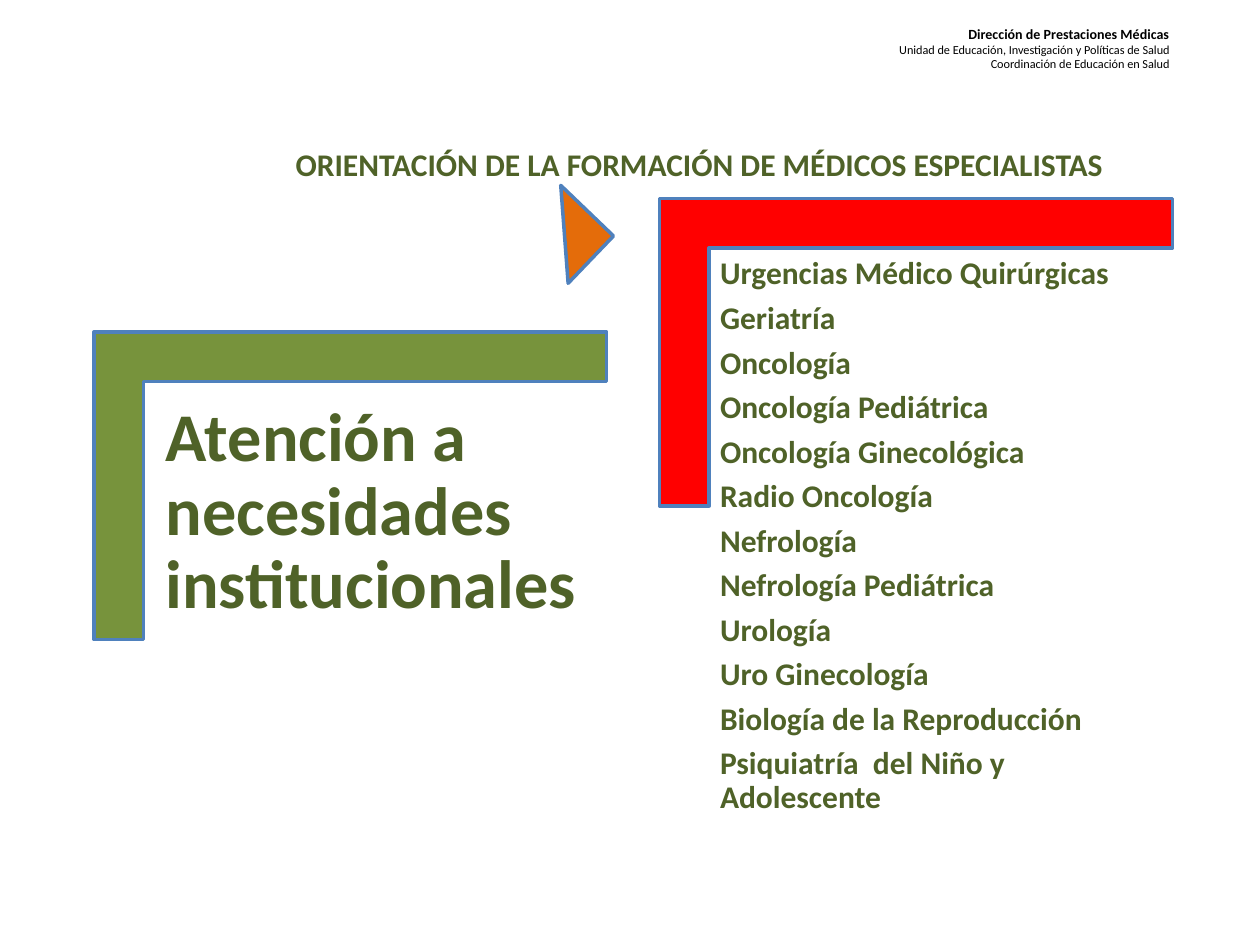
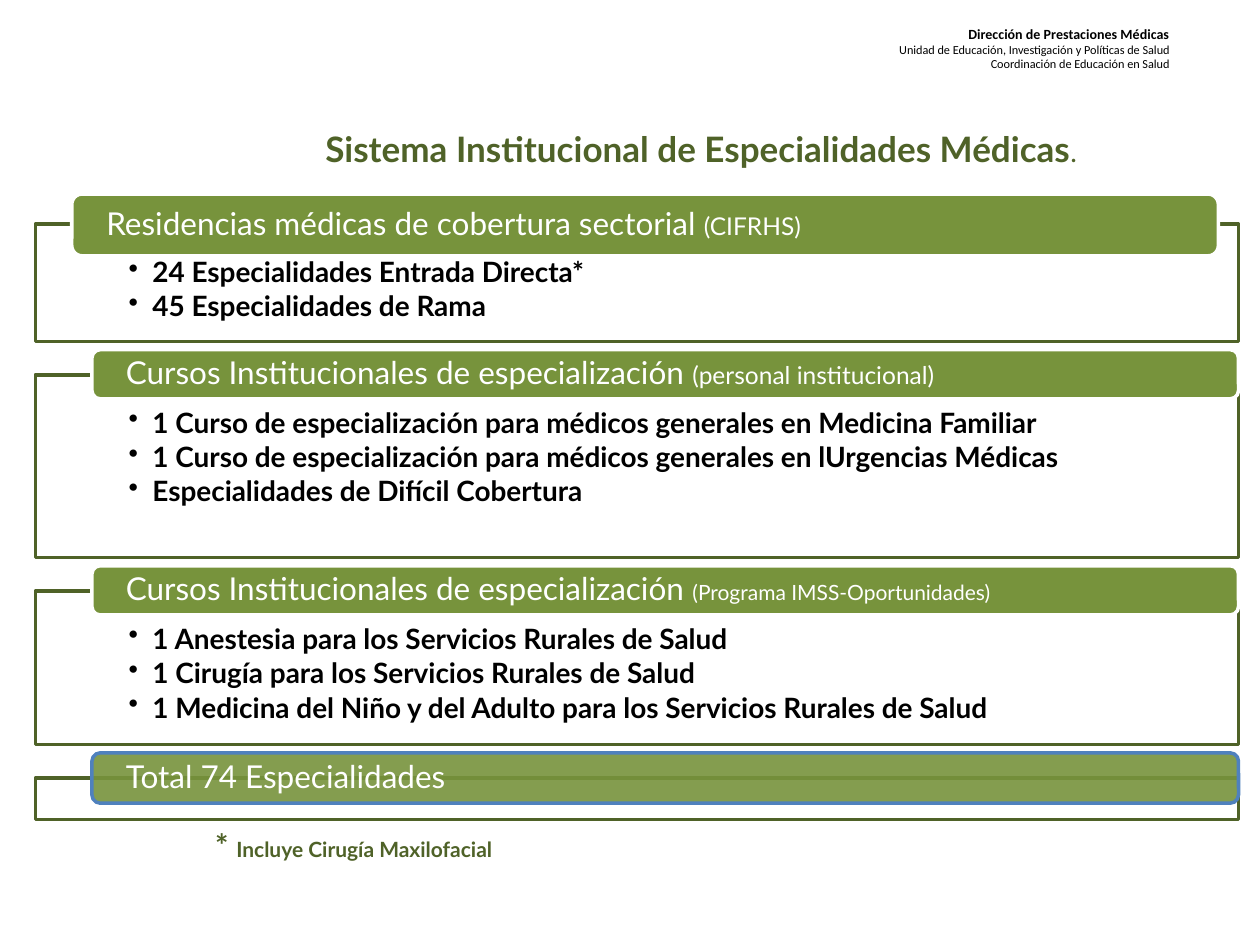
from collections import namedtuple
from dataclasses import dataclass

from lxml import etree
from pptx import Presentation
from pptx.dml.color import RGBColor
from pptx.enum.shapes import MSO_SHAPE
from pptx.enum.text import MSO_ANCHOR, PP_ALIGN
from pptx.oxml.ns import qn
from pptx.util import Inches, Pt

RECT, ROUND = MSO_SHAPE.RECTANGLE, MSO_SHAPE.ROUNDED_RECTANGLE
CORNER, WEDGE = MSO_SHAPE.CORNER, MSO_SHAPE.ISOSCELES_TRIANGLE
LEFT, MID, RIGHT = PP_ALIGN.LEFT, PP_ALIGN.CENTER, PP_ALIGN.RIGHT
TOP, HALF = MSO_ANCHOR.TOP, MSO_ANCHOR.MIDDLE

# The grid has 100 columns and 75 rows
WIDE, HIGH = Inches(10), Inches(7.5)
COL, ROW = WIDE / 100, HIGH / 75
Box = namedtuple("Box", "x y w h")


@dataclass(frozen=True)
class Theme:
    dark: str = "4F6228"
    green: str = "77933C"
    blue: str = "4F81BD"
    red: str = "FF0000"
    gold: str = "E46C0A"
    white: str = "FFFFFF"
    black: str = "000000"
    main: str = "Calibri"
    alt: str = "Lato"
    huge: int = 39
    title: int = 20
    head: int = 18
    body: int = 16
    side: int = 14
    note: int = 12
    unit: int = 8
    tiny: int = 7
    edge: int = 2


T = Theme()


def place(box):
    """Turn grid columns and rows into slide lengths."""
    return [round(n) for n in (box.x * COL, box.y * ROW, box.w * COL, box.h * ROW)]


def within(box, x, y, w, h):
    """A box set off from the top left of another."""
    return Box(box.x + x, box.y + y, w, h)


def draw(slide, kind, box, fill, line, alpha=None, turn=0, adjust=()):
    shape = slide.shapes.add_shape(kind, *place(box))
    shape.shadow.inherit = False
    shape.rotation = turn
    for i, part in enumerate(adjust):
        shape.adjustments[i] = part
    shape.fill.solid()
    shape.fill.fore_color.rgb = RGBColor.from_string(fill)
    if alpha:
        tone = shape._element.spPr.find(qn("a:solidFill")).find(qn("a:srgbClr"))
        etree.SubElement(tone, qn("a:alpha")).set("val", str(alpha * 1000))
    shape.line.color.rgb = RGBColor.from_string(line)
    shape.line.width = Pt(T.edge)
    return shape


def write(shape, paras, size=T.head, font=T.main, color=T.dark, bold=False,
          align=LEFT, anchor=TOP, inset=(1, 0.5, 1, 0.5), lead=None,
          after=0, bullet=False):
    """Each paragraph is a string or a list of (text, own format) runs."""
    frame = shape.text_frame
    frame.word_wrap = True
    frame.vertical_anchor = anchor
    (frame.margin_left, frame.margin_top,
     frame.margin_right, frame.margin_bottom) = [round(n * COL) for n in inset]
    for i, para in enumerate(paras):
        p = frame.paragraphs[0] if i == 0 else frame.add_paragraph()
        p.alignment = align
        p.line_spacing = lead
        p.space_after = Pt(after)
        if bullet:
            props = p._p.get_or_add_pPr()
            props.set("marL", str(Inches(0.19)))
            props.set("indent", str(-Inches(0.19)))
            etree.SubElement(props, qn("a:buChar")).set("char", "•")
        for words, own in ([(para, {})] if isinstance(para, str) else para):
            run = p.add_run()
            run.text = words
            run.font.name = font
            run.font.size = Pt(own.get("size", size))
            run.font.bold = own.get("bold", bold)
            run.font.color.rgb = RGBColor.from_string(color)


def label(slide, box, paras, **form):
    write(slide.shapes.add_textbox(*place(box)), paras, **form)


# Shared page with the unit's name at the top right
def page(deck):
    slide = deck.slides.add_slide(deck.slide_layouts[6])
    label(slide, Box(66.9, 1.5, 26.9, 6.2),
          [[("Dirección de Prestaciones Médicas", {"size": T.unit, "bold": True})],
           "Unidad de Educación, Investigación y Políticas de Salud",
           "Coordinación de Educación en Salud"],
          size=T.tiny, color=T.black, align=RIGHT)
    return slide


# Angle bracket with text inside its corner
def bracket(slide, box, fill, paras, size, pad):
    # The shape is turned by 90°, so its sides swap about the same centre
    skew = (box.w - box.h) / 2
    draw(slide, CORNER, within(box, skew, -skew, box.h, box.w), fill, T.blue,
         turn=90, adjust=(0.161, 0.161))
    label(slide, within(box, 4.1, 4, 36.7, 32.2), paras, size=size, bold=True,
          inset=(pad,) * 4, lead=0.9, after=6)


# Framed list under a band; the band begins at the top of the box
def section(slide, box, head, items, shift=4.5, band=3.9, drop=2,
            edge=T.white, alpha=None):
    body = draw(slide, RECT, within(box, 0, drop, box.w, box.h - drop),
                T.white, T.dark, alpha=90)
    if items:
        write(body, items, size=T.body, font=T.alt, color=T.black, bold=True,
              inset=(7.4, 2.7, 7.4, 1.2), lead=0.9, after=2.4, bullet=True)
    bar = draw(slide, ROUND, within(box, shift, 0, 91, band), T.green, edge,
               alpha=alpha)
    write(bar, [head], font=T.alt, color=T.white, anchor=HALF,
          inset=(2.5, 0, 2.5, 0), lead=0.9)


def needs(deck):
    slide = page(deck)
    label(slide, Box(11.4, 11, 88.2, 4),
          ["ORIENTACIÓN DE LA FORMACIÓN DE MÉDICOS ESPECIALISTAS"],
          bold=True, align=MID)
    bracket(slide, Box(7.45, 26.35, 40.7, 24.4), T.green,
            ["Atención a necesidades institucionales"], T.huge, 1.6)
    draw(slide, WEDGE, Box(42.2, 15.7, 5.2, 5.8), T.gold, T.blue,
         turn=313.8, adjust=(1,))
    bracket(slide, Box(52.35, 15.75, 40.7, 24.4), T.red,
            ["Urgencias Médico Quirúrgicas", "Geriatría", "Oncología",
             "Oncología Pediátrica", "Oncología Ginecológica",
             "Radio Oncología", "Nefrología", "Nefrología Pediátrica",
             "Urología", "Uro Ginecología", "Biología de la Reproducción",
             "Psiquiatría  del Niño y Adolescente"], T.head, 0.7)


def system(deck):
    slide = page(deck)
    label(slide, Box(13, 9.6, 85.3, 4.4),
          [[("Sistema Institucional de Especialidades Médicas",
             {"size": T.title, "bold": True}), (".", {})]],
          size=T.body, font=T.alt, align=MID)
    course = "Cursos Institucionales de especialización "
    # Height, heading, list and own format of each section
    parts = [
        (11.7, [("Residencias médicas de cobertura sectorial ", {}),
                ("(CIFRHS)", {"size": T.side})],
         ["24 Especialidades Entrada Directa*", "45 Especialidades de Rama"],
         {"shift": 2.9, "band": 4.9, "drop": 2.4}),
        (16.5, [(course, {}), ("(personal institucional)", {"size": T.side})],
         ["1 Curso de especialización para médicos generales en Medicina Familiar",
          "1 Curso de especialización para médicos generales en lUrgencias Médicas",
          "Especialidades de Difícil Cobertura"], {}),
        (14.2, [(course, {}),
                ("(Programa IMSS-Oportunidades)", {"size": T.note})],
         ["1 Anestesia para los Servicios Rurales de Salud",
          "1 Cirugía para los Servicios Rurales de Salud",
          "1 Medicina del Niño y del Adulto para los Servicios Rurales de Salud"],
         {}),
        (5.3, "Total 74 Especialidades", [],
         {"band": 4, "edge": T.blue, "alpha": 90}),
    ]
    top, gap = 15.4, 0.65
    for high, head, items, form in parts:
        section(slide, Box(2.8, top, 95.5, high), head, items, **form)
        top += high + gap
    label(slide, Box(16.1, 65.1, 28.1, 4),
          [[("* ", {"size": T.head}), ("Incluye Cirugía Maxilofacial", {})]],
          size=T.note, font=T.alt, bold=True)


def main():
    deck = Presentation()
    deck.slide_width, deck.slide_height = WIDE, HIGH
    needs(deck)
    system(deck)
    deck.save("out.pptx")


if __name__ == "__main__":
    main()
